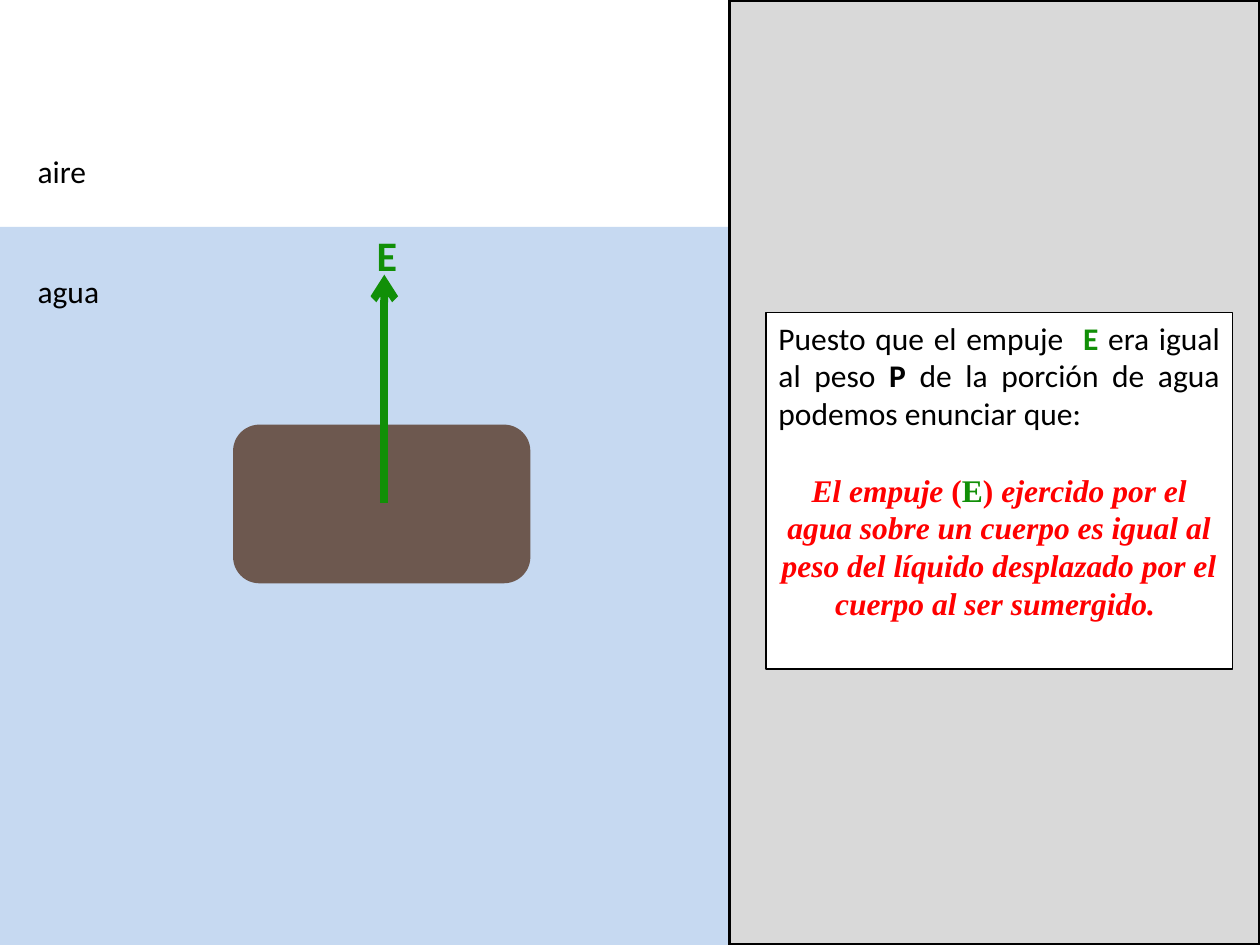
from lxml import etree
from pptx import Presentation
from pptx.dml.color import RGBColor
from pptx.enum.shapes import MSO_CONNECTOR, MSO_SHAPE
from pptx.enum.text import MSO_ANCHOR, PP_ALIGN
from pptx.oxml.ns import qn
from pptx.util import Pt

RECT = MSO_SHAPE.RECTANGLE
ROUNDED = MSO_SHAPE.ROUNDED_RECTANGLE
STRAIGHT = MSO_CONNECTOR.STRAIGHT
TOP = MSO_ANCHOR.TOP
JUSTIFY, CENTER = PP_ALIGN.JUSTIFY, PP_ALIGN.CENTER

WHITE = RGBColor(0xFF, 0xFF, 0xFF)
BLACK = RGBColor(0x00, 0x00, 0x00)
RED = RGBColor(0xFF, 0x00, 0x00)
GREEN = RGBColor(0x11, 0x8F, 0x07)
WATER = RGBColor(0xC6, 0xD9, 0xF1)
BODY = RGBColor(0x6D, 0x58, 0x4F)
PANEL = RGBColor(0xD9, 0xD9, 0xD9)

SANS, SERIF = "Calibri", "Times New Roman"
SLIDE_W, SLIDE_H = 720, 540
SPLIT_X = 416.88
SURFACE_Y = 129.6

# Runs: text, colour, bold, italic
REASON = [
    ("Puesto que el empuje  ", BLACK, False, False),
    ("E ", GREEN, True, False),
    ("era igual al peso ", BLACK, False, False),
    ("P", BLACK, True, False),
    (" de la porción de agua podemos enunciar que:", BLACK, False, False),
]
PRINCIPLE = [
    ("El empuje ", RED, True, True),
    ("(", RED, True, False),
    ("E", GREEN, True, False),
    (") ", RED, True, False),
    ("ejercido por el agua sobre un cuerpo es igual al peso del líquido "
     "desplazado por el cuerpo al ser sumergido. ", RED, True, True),
]


def style_font(font, name, size, color, bold=False, italic=False):
    font.name = name
    font.size = Pt(size)
    font.color.rgb = color
    font.bold = bold
    font.italic = italic


def add_block(slide, kind, left, top, width, height, fill, line_width=0):
    block = slide.shapes.add_shape(kind, Pt(left), Pt(top), Pt(width), Pt(height))
    block.shadow.inherit = False
    block.fill.solid()
    block.fill.fore_color.rgb = fill
    if line_width:
        block.line.color.rgb = BLACK
        block.line.width = Pt(line_width)
    else:
        block.line.fill.background()
    return block


def add_label(slide, text, left, top, width, height, size, color, bold=False):
    label = slide.shapes.add_textbox(Pt(left), Pt(top), Pt(width), Pt(height))
    frame = label.text_frame
    frame.word_wrap = True
    frame.text = text
    style_font(frame.paragraphs[0].runs[0].font, SANS, size, color, bold)


def add_force_arrow(slide, x, start_y, end_y, color, width):
    force = slide.shapes.add_connector(
        STRAIGHT, Pt(x), Pt(start_y), Pt(x), Pt(end_y))
    force.line.color.rgb = color
    force.line.width = Pt(width)
    etree.SubElement(force.line._get_or_add_ln(), qn("a:tailEnd"), type="arrow")
    etree.SubElement(force._element.spPr, qn("a:effectLst"))


def fill_paragraph(paragraph, pieces, font_name, alignment):
    paragraph.alignment = alignment
    for text, color, bold, italic in pieces:
        run = paragraph.add_run()
        run.text = text
        style_font(run.font, font_name, 18, color, bold, italic)


def add_explanation(slide):
    card = add_block(slide, RECT, 437.76, 178.56, 266.4, 203.76, WHITE, 0.75)
    frame = card.text_frame
    frame.word_wrap = True
    frame.vertical_anchor = TOP
    fill_paragraph(frame.paragraphs[0], REASON, SANS, JUSTIFY)
    principle = frame.add_paragraph()
    principle.space_before = Pt(22)
    fill_paragraph(principle, PRINCIPLE, SERIF, CENTER)


def main():
    prs = Presentation()
    prs.slide_width, prs.slide_height = Pt(SLIDE_W), Pt(SLIDE_H)
    slide = prs.slides.add_slide(prs.slide_layouts[6])

    # Air and water
    add_block(slide, RECT, 0, SURFACE_Y, SPLIT_X, SLIDE_H - SURFACE_Y, WATER)
    for medium, top in (("aire", 83.52), ("agua", 151.92)):
        add_label(slide, medium, 14.4, top, 51.12, 28.8, 18, BLACK)

    # Submerged body and side panel
    add_block(slide, ROUNDED, 133.2, 242.64, 169.92, 90.72, BODY)
    add_block(slide, RECT, SPLIT_X, 0, SLIDE_W - SPLIT_X, SLIDE_H, PANEL, 2)

    # Buoyant force
    add_force_arrow(slide, 219.6, 287.28, 156.96, GREEN, 4.5)
    add_label(slide, "E", 208.08, 127.44, 56.88, 36.72, 24, GREEN, bold=True)

    # Statement of the principle
    add_explanation(slide)
    prs.save("out.pptx")


if __name__ == "__main__":
    main()
